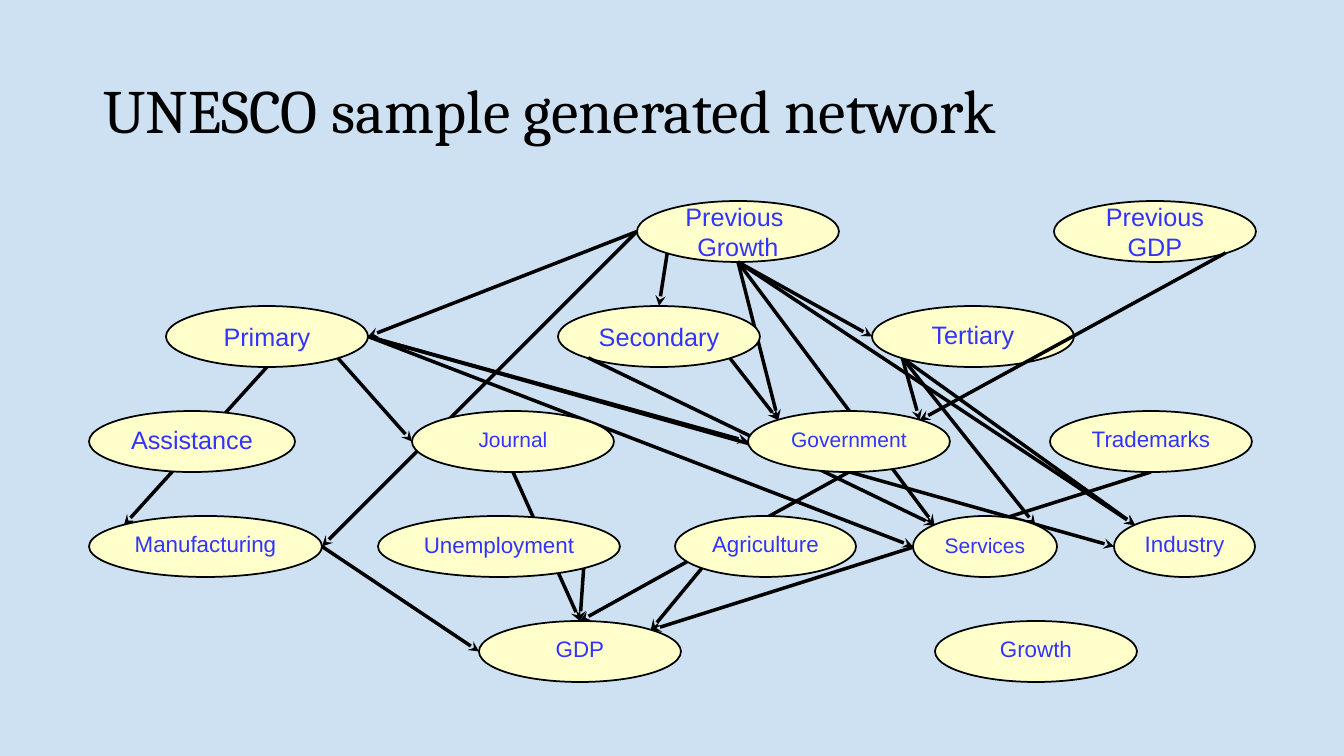
from lxml.etree import SubElement
from pptx import Presentation
from pptx.dml.color import RGBColor
from pptx.enum.shapes import MSO_CONNECTOR, MSO_SHAPE
from pptx.enum.text import MSO_ANCHOR, MSO_AUTO_SIZE, PP_ALIGN
from pptx.oxml.ns import qn
from pptx.util import Emu, Pt

SKY = RGBColor(0xCE, 0xE1, 0xF2)
CREAM = RGBColor(0xFF, 0xFF, 0xCC)
INK = RGBColor(0x00, 0x00, 0x00)
LABEL_BLUE = RGBColor(0x33, 0x33, 0xFF)

ROW_TOP, ROW_STEP, NODE_HEIGHT = 201, 105, 61

# Where an arrow may touch an ellipse, as fractions of its box
NEAR, FAR = 0.15, 0.85
SITES = {
    "top": (0.5, 0), "bottom": (0.5, 1), "left": (0, 0.5), "right": (1, 0.5),
    "top left": (NEAR, NEAR), "top right": (FAR, NEAR),
    "bottom left": (NEAR, FAR), "bottom right": (FAR, FAR),
}

# Name: (row, left, width, font size, line spacing)
PAST_GROWTH = "Previous \vGrowth"
NODES = {
    "GDP": (4, 479, 202, 16, 0.8),
    "Previous GDP": (0, 1054, 202, 18, 1.0),
    PAST_GROWTH: (0, 637, 202, 18, 1.0),
    "Growth": (4, 935, 202, 16, 0.8),
    "Tertiary": (1, 872, 202, 18, 0.9),
    "Primary": (1, 166, 202, 18, 1.0),
    "Secondary": (1, 558, 202, 18, 1.0),
    "Assistance": (2, 89, 206, 18, 0.9),
    "Journal": (2, 412, 202, 15, 0.8),
    "Trademarks": (2, 1050, 202, 16, 0.8),
    "Government": (2, 748, 202, 15, 0.8),
    "Unemployment": (3, 378, 242, 16, 0.9),
    "Services": (3, 913, 144, 15, 0.9),
    "Agriculture": (3, 675, 181, 16, 0.8),
    "Industry": (3, 1114, 141, 16, 0.8),
    "Manufacturing": (3, 89, 233, 16, 0.8),
}

# (cause, site, effect, site), grouped by drawing layer
LOWER_LINKS = [
    (PAST_GROWTH, "bottom", "Tertiary", "left"),
    (PAST_GROWTH, "bottom left", "Secondary", "top"),
    (PAST_GROWTH, "bottom", "Government", "top left"),
    ("Secondary", "bottom right", "Government", "top left"),
    ("Tertiary", "bottom left", "Services", "top right"),
    ("Government", "bottom", "GDP", "top"),
    ("Unemployment", "bottom right", "GDP", "top"),
    ("Manufacturing", "right", "GDP", "left"),
    ("Agriculture", "bottom left", "GDP", "top right"),
    ("Journal", "bottom", "GDP", "top"),
    (PAST_GROWTH, "left", "Primary", "right"),
    ("Primary", "right", "Industry", "left"),
    (PAST_GROWTH, "bottom", "Industry", "top left"),
    (PAST_GROWTH, "left", "Manufacturing", "right"),
    (PAST_GROWTH, "bottom", "Services", "top left"),
    ("Tertiary", "bottom left", "Industry", "top left"),
    ("Primary", "bottom", "Manufacturing", "top left"),
    ("Trademarks", "bottom", "GDP", "top right"),
    ("Tertiary", "bottom left", "Government", "top right"),
    ("Primary", "right", "Government", "left"),
]
SCHOOLING_LINKS = [
    ("Secondary", "bottom left", "Services", "top left"),
    ("Primary", "right", "Services", "left"),
    ("Primary", "bottom right", "Journal", "left"),
]
TOP_LINKS = [("Previous GDP", "bottom right", "Government", "top right")]


def px(length):
    return Emu(round(length * 914400 / 100.8))


def apply(target, values):
    for name, value in values.items():
        setattr(target, name, value)


class NetworkSlide:
    title_font = {"name": "Cambria", "size": Pt(44)}
    node_font = {"name": "Arial"}
    frame = {"word_wrap": True, "vertical_anchor": MSO_ANCHOR.MIDDLE}
    no_margins = dict.fromkeys(
        ("margin_left", "margin_right", "margin_top", "margin_bottom"), 0)

    def __init__(self, deck):
        self.slide = deck.slides.add_slide(deck.slide_layouts[5])
        backdrop = self.slide.background.fill
        backdrop.solid()
        backdrop.fore_color.rgb = SKY

    def set_text(self, text_frame, words, color, font, paragraph_format):
        text_frame.text = words
        apply(text_frame, self.frame)
        paragraph = text_frame.paragraphs[0]
        apply(paragraph, paragraph_format)
        for run in paragraph.runs:
            apply(run.font, font)
            run.font.color.rgb = color

    def title(self, words, left, top, width, height):
        heading = self.slide.shapes.title
        apply(heading, {"left": px(left), "top": px(top),
                        "width": px(width), "height": px(height)})
        self.set_text(heading.text_frame, words, INK, self.title_font,
                      {"alignment": PP_ALIGN.LEFT, "line_spacing": 0.9})
        heading.text_frame.auto_size = MSO_AUTO_SIZE.NONE

    def node(self, name):
        row, left, width, size, spacing = NODES[name]
        ellipse = self.slide.shapes.add_shape(
            MSO_SHAPE.OVAL, px(left), px(ROW_TOP + row * ROW_STEP),
            px(width), px(NODE_HEIGHT))
        ellipse.shadow.inherit = False
        ellipse.fill.solid()
        ellipse.fill.fore_color.rgb = CREAM
        ellipse.line.color.rgb = INK
        ellipse.line.width = Pt(1.25)
        apply(ellipse.text_frame, self.no_margins)
        self.set_text(ellipse.text_frame, name, LABEL_BLUE,
                      {**self.node_font, "size": Pt(size)},
                      {"alignment": PP_ALIGN.CENTER, "line_spacing": spacing})

    def point(self, name, site):
        row, left, width = NODES[name][:3]
        across, down = SITES[site]
        return (px(left + across * width),
                px(ROW_TOP + row * ROW_STEP + down * NODE_HEIGHT))

    def link(self, cause, cause_site, effect, effect_site):
        arrow = self.slide.shapes.add_connector(
            MSO_CONNECTOR.STRAIGHT, *self.point(cause, cause_site),
            *self.point(effect, effect_site))
        arrow.line.color.rgb = INK
        arrow.line.width = Pt(2.5)
        properties = arrow.element.spPr
        SubElement(properties.find(qn("a:ln")), qn("a:tailEnd"), type="stealth")
        SubElement(properties, qn("a:effectLst"))


def main():
    deck = Presentation()
    deck.slide_width, deck.slide_height = px(1344), px(756)
    network = NetworkSlide(deck)
    network.title("UNESCO sample generated network", 93, 40, 1159, 147)

    # Layers from back to front: nodes, then the links that cross them
    names = list(NODES)
    layers = [
        (names[:4], LOWER_LINKS),
        (names[4:7], SCHOOLING_LINKS),
        (names[7:], TOP_LINKS),
    ]
    for layer_nodes, layer_links in layers:
        for name in layer_nodes:
            network.node(name)
        for ends in layer_links:
            network.link(*ends)

    deck.save("out.pptx")


if __name__ == "__main__":
    main()
